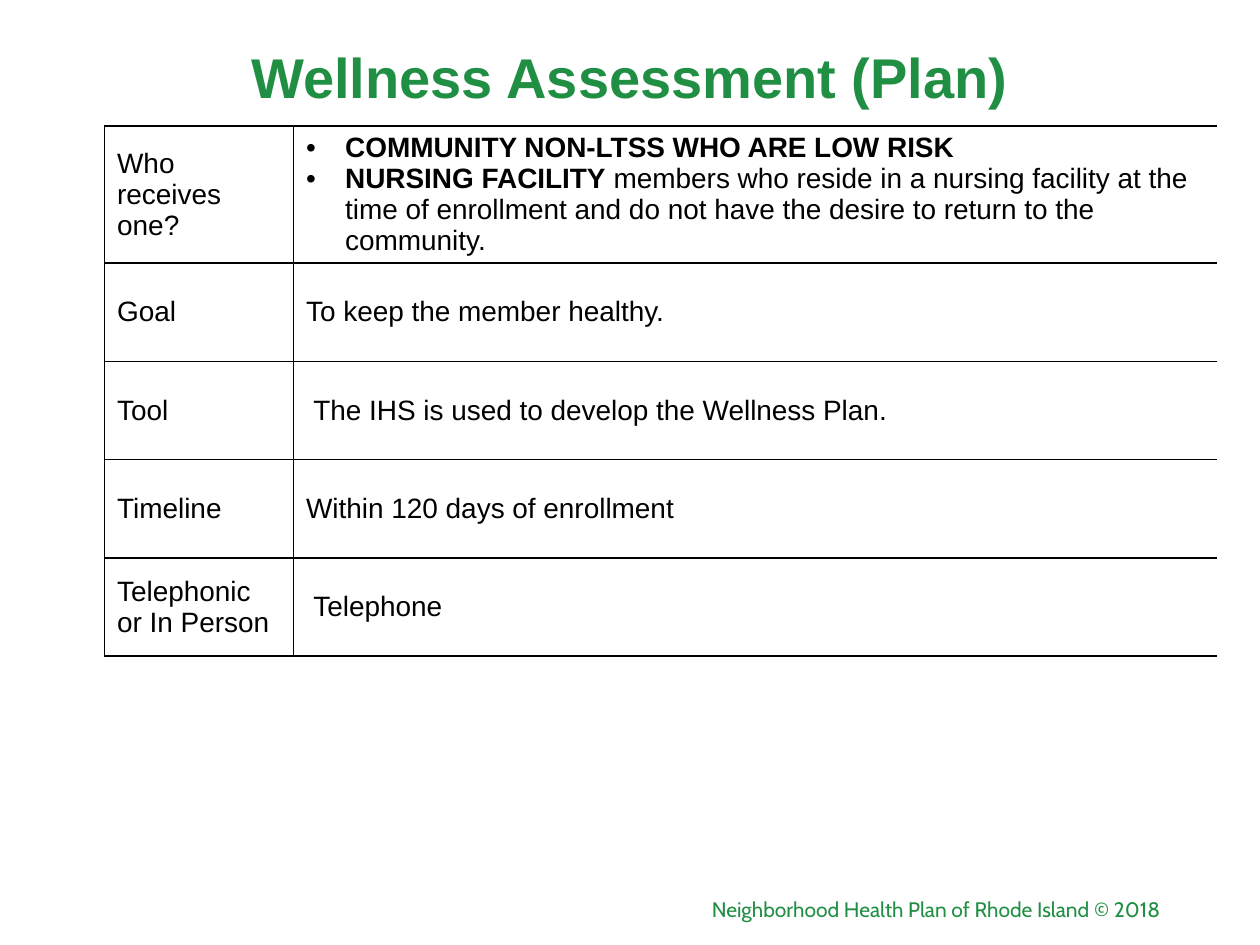
from pptx import Presentation
from pptx.dml.color import RGBColor as Rgb
from pptx.enum.text import MSO_ANCHOR as Anchor, PP_ALIGN as Align
from pptx.oxml.ns import qn
from pptx.util import Inches, Pt
from lxml.etree import SubElement as Sub

COLORS = {"green": "208F44", "black": "000000"}

# Each row: label, then paragraphs made of (text, bold) runs
ROWS = [
    ("Who receives one?", [
        [("COMMUNITY NON-LTSS WHO ARE LOW RISK", True)],
        [("NURSING FACILITY", True),
         (" members who reside in a nursing facility at the time of enrollment "
          "and do not have the desire to return to the community.", False)]]),
    ("Goal", [[("To keep the member healthy.", False)]]),
    ("Tool", [[(" The IHS is used to develop the Wellness Plan.", False)]]),
    ("Timeline", [[("Within 120 days of enrollment", False)]]),
    ("Telephonic or In Person", [[(" Telephone", False)]]),
]


def write(para, text, size=16, color="black", face="Arial", bold=False):
    """Add one formatted run to a paragraph."""
    run = para.add_run()
    run.text = text
    font = run.font
    font.size, font.name, font.bold = Pt(size), face, bold
    font.color.rgb = Rgb.from_string(COLORS[color])


class Page:
    def __init__(self, slide):
        self.slide = slide

    def place(self, shape, left, top, width, height):
        shape.left, shape.top = Inches(left), Inches(top)
        shape.width, shape.height = Inches(width), Inches(height)

    def title(self, text, *box):
        shape = self.slide.shapes.title
        self.place(shape, *box)
        frame = shape.text_frame
        frame.word_wrap = True
        frame.vertical_anchor = Anchor.MIDDLE
        para = frame.paragraphs[0]
        para.alignment, para.line_spacing = Align.CENTER, 0.9
        write(para, text, size=32, color="green", bold=True)

    def footer(self, text, *box):
        frame = self.slide.shapes.add_textbox(*map(Inches, box)).text_frame
        frame.word_wrap = True
        frame.vertical_anchor = Anchor.MIDDLE
        para = frame.paragraphs[0]
        para.alignment = Align.RIGHT
        write(para, text, size=12, color="green", face="Cabin")

    def border(self, cell, sides):
        props = cell._tc.get_or_add_tcPr()
        for side in "LRTB":
            line = Sub(props, qn(f"a:ln{side}"), w=str(Pt(1)))
            if side in sides:
                fill = Sub(line, qn("a:solidFill"))
                Sub(fill, qn("a:srgbClr"), val=COLORS["black"])
            else:
                Sub(line, qn("a:noFill"))

    def bullet(self, para):
        props = para._p.get_or_add_pPr()
        props.set("marL", str(Inches(0.31)))
        props.set("indent", str(-Inches(0.31)))
        Sub(props, qn("a:buFont"), typeface="Arial")
        Sub(props, qn("a:buChar"), char="•")

    def cell(self, cell, paras, sides):
        self.border(cell, sides)
        cell.fill.background()
        cell.vertical_anchor = Anchor.MIDDLE
        frame = cell.text_frame
        for i, runs in enumerate(paras):
            para = frame.add_paragraph() if i else frame.paragraphs[0]
            if len(paras) > 1:
                self.bullet(para)
            for text, bold in runs:
                write(para, text, bold=bold)

    def table(self, rows, left, top, widths, heights):
        size = map(Inches, (left, top, sum(widths), sum(heights)))
        grid = self.slide.shapes.add_table(len(rows), len(widths), *size).table
        grid.first_row = grid.horz_banding = False
        for col, width in zip(grid.columns, widths):
            col.width = Inches(width)
        for r, (label, paras) in enumerate(rows):
            grid.rows[r].height = Inches(heights[r])
            self.cell(grid.cell(r, 0), [[(label, False)]], "LRTB")
            self.cell(grid.cell(r, 1), paras, "LTB")


def main():
    deck = Presentation()
    deck.slide_width, deck.slide_height = Inches(10), Inches(7.5)
    page = Page(deck.slides.add_slide(deck.slide_layouts[5]))

    # Heading, plan table, copyright line
    page.title("Wellness Assessment (Plan)", 0.5, 0.01, 9, 1.25)
    page.table(ROWS, 0.83, 1, [1.5, 7.33], [0.9] + [0.78] * 4)
    page.footer("Neighborhood Health Plan of Rhode Island © 2018",
                3.31, 7.08, 6, 0.27)
    deck.save("out.pptx")


if __name__ == "__main__":
    main()
